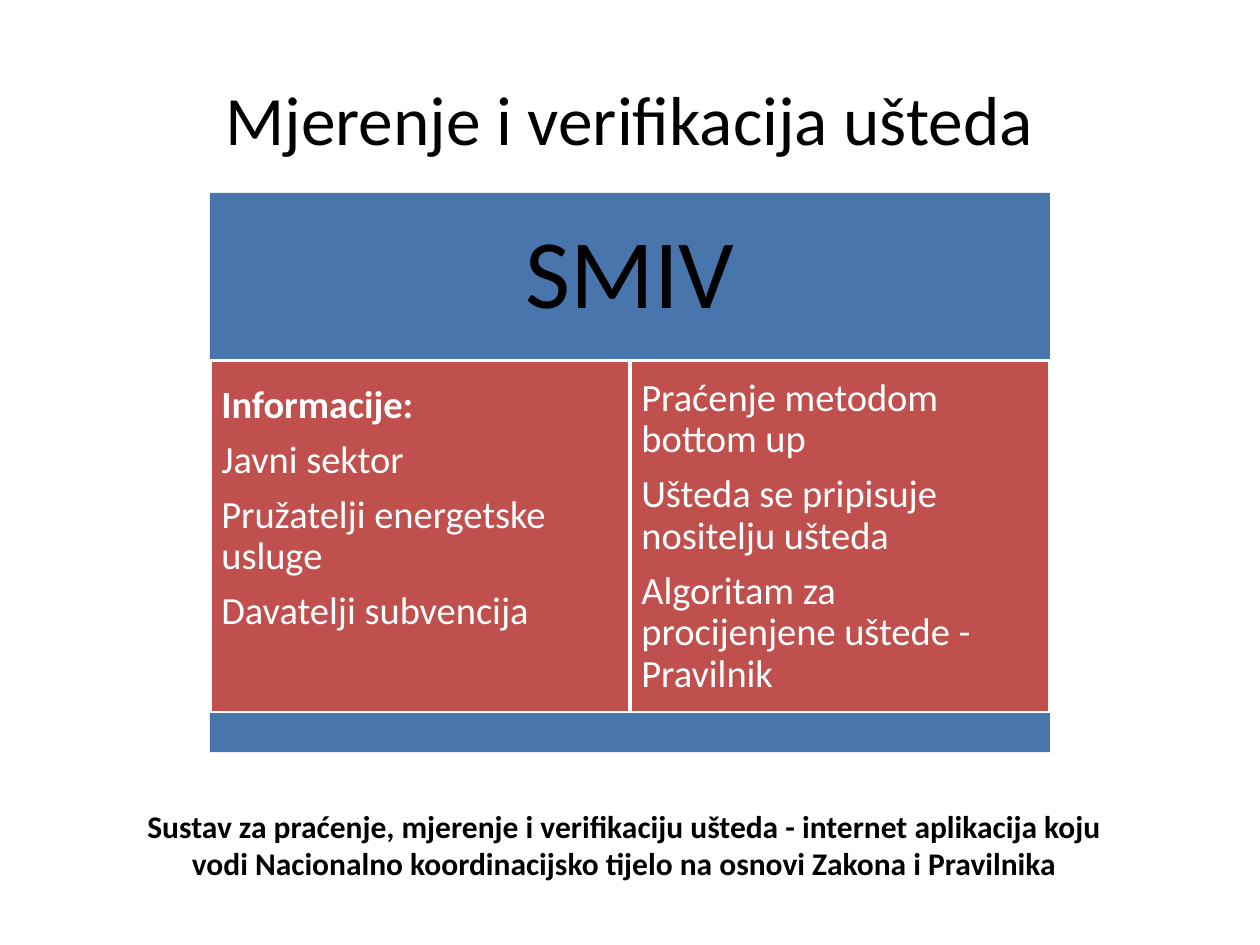
import pptx
import pptx.util
from pptx.dml.color import RGBColor
from pptx.enum.shapes import MSO_SHAPE
from pptx.enum.text import MSO_ANCHOR, PP_ALIGN

COLORS = {"band": "4875AC", "panel": "C0504D", "light": "FFFFFF", "dark": "000000"}
TITLE_ONLY = 5

# Diagram: the middle four of six slide columns, split into three rows
COLUMN = 1 / 6
DIAGRAM_LEFT, DIAGRAM_WIDTH = COLUMN, 4 * COLUMN
DIAGRAM_TOP, DIAGRAM_HEIGHT = 0.204, 0.592
HEADER_SHARE, PANEL_SHARE, FOOTER_SHARE = 0.3, 0.63, 0.07

SOURCES = ["Informacije:", "Javni sektor", "Pružatelji energetske usluge",
           "Davatelji subvencija"]
METHOD = ["Praćenje metodom bottom up", "Ušteda se pripisuje nositelju ušteda",
          "Algoritam za procijenjene uštede - Pravilnik"]


class SlideBuilder:
    """Holds the style and the current slide; places are shares of its size."""

    def __init__(self, presentation, font="Calibri"):
        self.width = presentation.slide_width
        self.height = presentation.slide_height
        self.font = font
        self.slide = presentation.slides.add_slide(
            presentation.slide_layouts[TITLE_ONLY])

    def place(self, left, top, width, height):
        return (round(left * self.width), round(top * self.height),
                round(width * self.width), round(height * self.height))

    def set_text(self, frame, lines, size, color, align, anchor=MSO_ANCHOR.MIDDLE,
                 bold_lines=0, line_spacing=1.0, gap=0):
        """Fill a text frame, with the first bold_lines paragraphs in bold."""
        frame.word_wrap = True
        frame.vertical_anchor = anchor
        for index, line in enumerate(lines):
            paragraph = frame.paragraphs[0] if index == 0 else frame.add_paragraph()
            paragraph.text = line
            paragraph.alignment = align
            paragraph.line_spacing = line_spacing
            paragraph.space_after = pptx.util.Pt(gap * size)
            paragraph.font.name = self.font
            paragraph.font.size = pptx.util.Pt(size)
            paragraph.font.bold = index < bold_lines
            paragraph.font.color.rgb = RGBColor.from_string(COLORS[color])

    def title(self, text, box, size):
        heading = self.slide.shapes.title
        heading.left, heading.top, heading.width, heading.height = self.place(*box)
        self.set_text(heading.text_frame, [text], size, "dark", PP_ALIGN.CENTER)

    def block(self, box, fill, outline=None):
        block = self.slide.shapes.add_shape(MSO_SHAPE.RECTANGLE, *self.place(*box))
        block.shadow.inherit = False
        block.fill.solid()
        block.fill.fore_color.rgb = RGBColor.from_string(COLORS[fill])
        if outline:
            block.line.color.rgb = RGBColor.from_string(COLORS[outline])
            block.line.width = pptx.util.Pt(2)
        else:
            block.line.fill.background()
        return block

    def header(self, text, box):
        frame = self.block(box, "band").text_frame
        self.set_text(frame, [text], 56, "dark", PP_ALIGN.CENTER, line_spacing=0.9)

    def panel(self, lines, box, bold_lines=0, bottom_inset=0.09):
        frame = self.block(box, "panel", outline="light").text_frame
        frame.margin_left = frame.margin_right = pptx.util.Inches(0.09)
        frame.margin_top = pptx.util.Inches(0.09)
        frame.margin_bottom = pptx.util.Inches(bottom_inset)
        self.set_text(frame, lines, 22, "light", PP_ALIGN.LEFT,
                      bold_lines=bold_lines, line_spacing=0.9, gap=0.35)

    def caption(self, text, box):
        caption = self.slide.shapes.add_textbox(*self.place(*box))
        self.set_text(caption.text_frame, [text], 18, "dark", PP_ALIGN.CENTER,
                      anchor=MSO_ANCHOR.TOP, bold_lines=1)


def main():
    presentation = pptx.Presentation()
    presentation.slide_width = pptx.util.Inches(10)
    presentation.slide_height = pptx.util.Inches(7.5)
    builder = SlideBuilder(presentation)

    builder.title("Mjerenje i verifikacija ušteda", (0.027, 0.101, 0.945, 0.048), 39.6)

    header_height, panel_height, footer_height = (
        share * DIAGRAM_HEIGHT for share in (HEADER_SHARE, PANEL_SHARE, FOOTER_SHARE))
    panel_top = DIAGRAM_TOP + header_height
    panel_width = DIAGRAM_WIDTH / 2
    builder.header("SMIV", (DIAGRAM_LEFT, DIAGRAM_TOP, DIAGRAM_WIDTH, header_height))
    builder.panel(SOURCES, (DIAGRAM_LEFT, panel_top, panel_width, panel_height),
                  bold_lines=1, bottom_inset=0.53)
    builder.panel(METHOD, (DIAGRAM_LEFT + panel_width, panel_top,
                           panel_width, panel_height))
    builder.block((DIAGRAM_LEFT, panel_top + panel_height,
                   DIAGRAM_WIDTH, footer_height), "band")

    builder.caption("Sustav za praćenje, mjerenje i verifikaciju ušteda - internet "
                    "aplikacija koju vodi Nacionalno koordinacijsko tijelo na osnovi "
                    "Zakona i Pravilnika", (0.098, 0.847, 0.795, 0.095))
    presentation.save("out.pptx")


if __name__ == "__main__":
    main()
